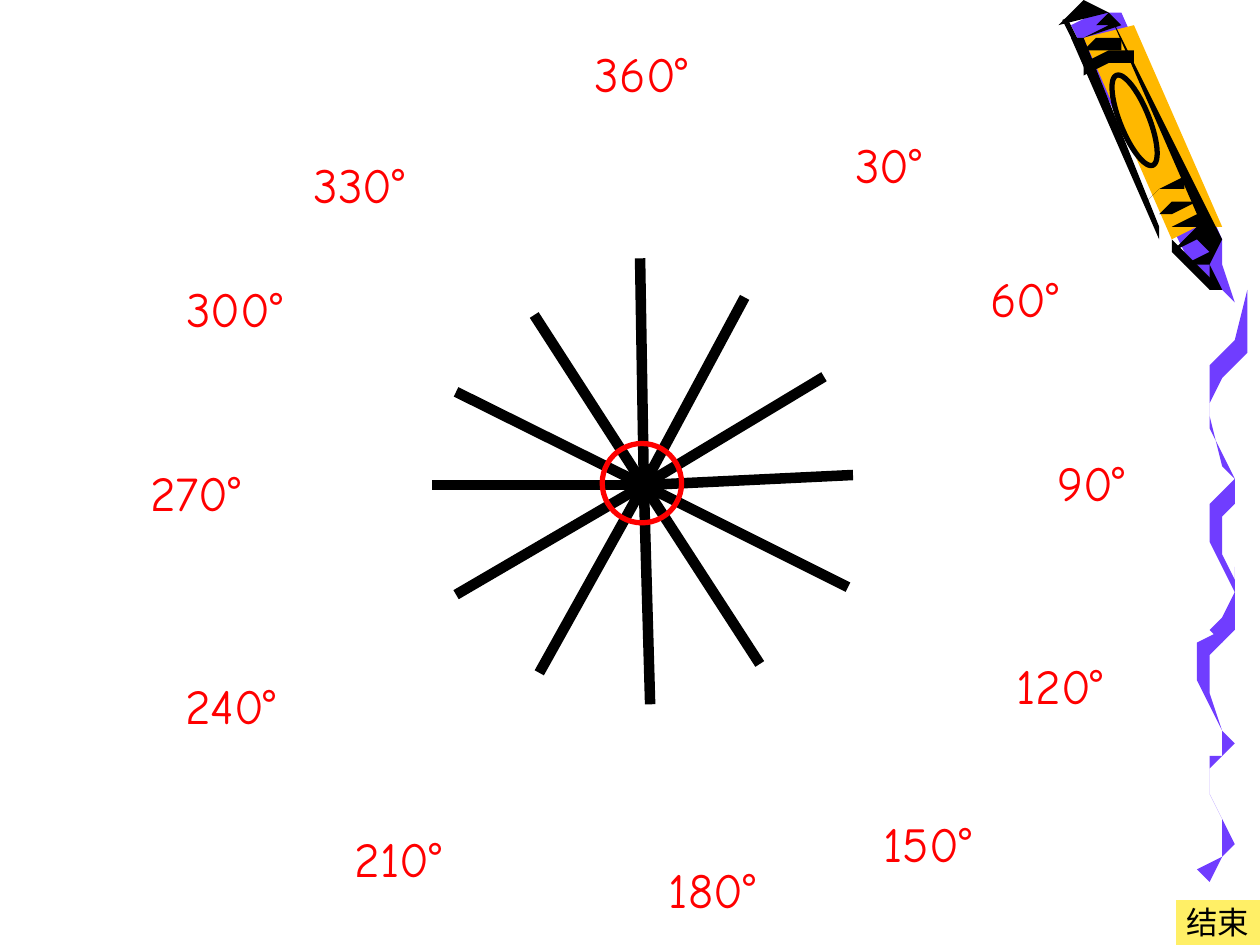
from lxml.etree import SubElement
from pptx import Presentation
from pptx.dml.color import RGBColor
from pptx.enum.shapes import MSO_CONNECTOR, MSO_SHAPE
from pptx.enum.text import MSO_ANCHOR, PP_ALIGN
from pptx.oxml.ns import qn
from pptx.util import Inches, Pt

FONT = "Comic Neue"
BLACK, RED, PURPLE, ORANGE, YELLOW = "000000", "FF0000", "703DFF", "FFB800", "FFEF66"

prs = Presentation()
prs.slide_width, prs.slide_height = Inches(10), Inches(7.5)
s = prs.slides.add_slide(prs.slide_layouts[6])
cell = prs.slide_width / 100  # grid of 100 columns by 75 rows


def rgb(value):
    return RGBColor.from_string(value)


def grid(*counts):
    """Turn counts of columns or rows into lengths."""
    return [round(n * cell) for n in counts]


# A squiggle is a ribbon: its left edge, then the same edge shifted, walked back up
edge = [(96, 50.5), (97.4, 48.7), (97.7, 47.3), (97.4, 45.2), (96.4, 42.7), (96.2, 41.1),
        (96.4, 40.1), (97.3, 39.3), (97.5, 38.3), (97.2, 36.9), (95.7, 33.2), (95.6, 31.3),
        (96, 29.3), (97.2, 28.4), (98.2, 26.8), (99.1, 23.1)]
upper = edge + [(x + 0.7, y + 0.8) for x, y in edge[-2::-1]]
lower = [(x - 0.65, 0.87 * y + 25.4) for x, y in upper]

# Four bands of one form, each placed by its lower left corner
band = [(0, 0), (1.1, -0.8), (3.3, -1), (3, -1.6), (1, -1.3), (-0.3, -0.5)]
bands = [[(left + x, top + y) for x, y in band]
         for left, top in [(92.1, 17.4), (91.2, 16), (86.5, 5.7), (86, 4.5)]]

tip_and_cap = [(85.4, 1.9), (93.7, 20), (97.8, 23.6), (97.1, 20.9), (97.3, 19.3), (89.2, 1.3), (86.7, 1.2)]
body = [(93.3, 19.3), (94.8, 18), (96.7, 17.8), (89.8, 2.5), (86, 3.4)]
tip_edge = [(92.9, 19.9), (96.5, 23.3), (96.6, 23), (93.1, 19.4)]
cap_mark = [(85.9, 2.7), (88.9, 2.3), (88.2, 1.1), (86.9, 1.5), (88, 1.8)]
left_edge = [(85, 3), (92.3, 19.1), (92.5, 18.2), (85.5, 3)]
right_edge = [(92.7, 19.8), (93.5, 18.8), (95.4, 17.9), (92.7, 18.4), (95.2, 16.8), (88.1, 1.1),
              (84.5, 1.5), (85.9, 0.4), (88.5, 0.6), (96.8, 18.9), (96.5, 20.6), (97.3, 23.3),
              (96.5, 23.2), (96.1, 20.9), (94.5, 20.8), (95.8, 20.4), (95.9, 19.5), (95.2, 18.8)]

outlines = [(PURPLE, tip_and_cap), (ORANGE, body), (PURPLE, lower), (PURPLE, upper)]
outlines += [(BLACK, ink) for ink in [tip_edge, cap_mark, left_edge, right_edge, *bands]]
for color, corners in outlines:
    builder = s.shapes.build_freeform(*corners[0], scale=cell)
    builder.add_line_segments(corners[1:], close=True)
    sp = builder.convert_to_shape()
    sp.shadow.inherit = False
    sp.fill.solid()
    sp.fill.fore_color.rgb = rgb(color)
    sp.line.fill.background()

# Crayon cap edge, then twelve spokes clockwise from the top
hub = (51.1, 38.5)
spoke_ends = [(50.8, 20.5), (59.1, 23.6), (65.4, 29.9), (67.7, 37.7), (67.3, 46.6), (60.3, 52.7),
              (51.6, 55.9), (42.8, 53.4), (36.2, 47.2), (34.3, 38.5), (36.2, 31.1), (42.4, 25)]
lines = [(3, (84.5, 1.5), (85.3, 3.1))] + [(6, hub, end) for end in spoke_ends]
for width, start, end in lines:
    line = s.shapes.add_connector(MSO_CONNECTOR.STRAIGHT, *grid(*start, *end))
    line.line.width = Pt(width)
    line.line.color.rgb = rgb(BLACK)
    SubElement(line._element.spPr, qn("a:effectLst"))

# Angle labels every 30 degrees, each placed by the middle of its top edge
label_width = 16.9
labels = [(70.5, 10.2), (81.3, 20.8), (86.6, 35.4), (84.1, 51.5), (73.6, 64.1), (56.5, 67.7),
          (31.6, 65.3), (18.3, 53.1), (15.5, 36.2), (18.6, 21.6), (28.5, 11.8), (50.9, 3)]
for i, (middle, top) in enumerate(labels, 1):
    tf = s.shapes.add_textbox(*grid(middle - label_width / 2, top, label_width, 5.7)).text_frame
    tf.word_wrap = True
    p = tf.paragraphs[0]
    p.alignment = PP_ALIGN.CENTER
    r = p.add_run()
    r.text = f"{30 * i}°"
    r.font.name, r.font.size = FONT, Pt(28)
    r.font.color.rgb = rgb(RED)

# Oval on the crayon, and the full turn around the hub
ovals = [(BLACK, -22, (88.9, 5.7, 2.3, 7.7)), (RED, 0, (47.8, 35.2, 6.3, 6.3))]
for color, turn, place in ovals:
    oval = s.shapes.add_shape(MSO_SHAPE.OVAL, *grid(*place))
    oval.rotation = turn
    oval.shadow.inherit = False
    oval.fill.background()
    oval.line.width = Pt(3)
    oval.line.color.rgb = rgb(color)

# End button in the bottom right corner
button = s.shapes.add_shape(MSO_SHAPE.ACTION_BUTTON_CUSTOM, *grid(93.3, 71.4, 6.7, 3.6))
button.shadow.inherit = False
button.fill.solid()
button.fill.fore_color.rgb = rgb(YELLOW)
button.line.fill.background()
tf = button.text_frame
tf.word_wrap = False
tf.vertical_anchor = MSO_ANCHOR.MIDDLE
p = tf.paragraphs[0]
p.alignment = PP_ALIGN.CENTER
r = p.add_run()
r.text = "结束"
r.font.name, r.font.size = FONT, Pt(18)
r.font.color.rgb = rgb(BLACK)

prs.save("out.pptx")
